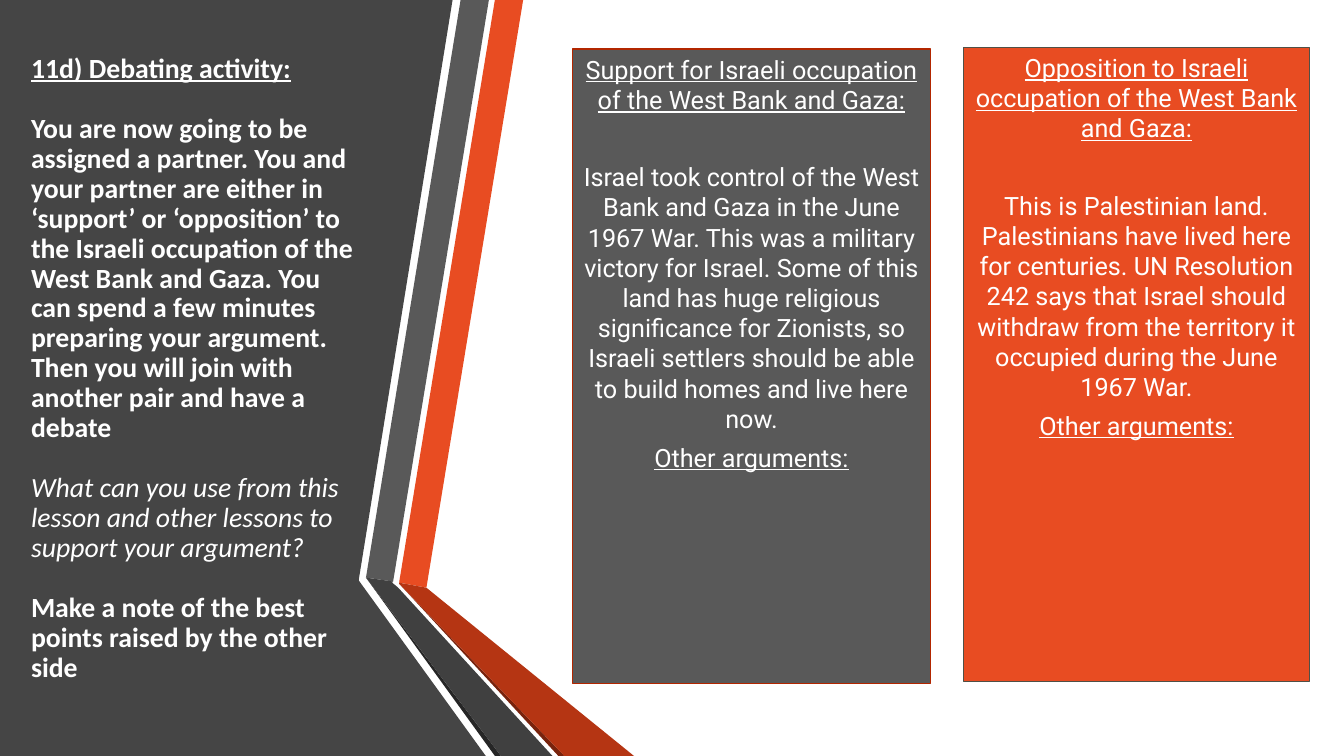
from dataclasses import dataclass

from pptx import Presentation
from pptx.dml.color import RGBColor
from pptx.enum.shapes import MSO_SHAPE
from pptx.enum.text import MSO_ANCHOR, PP_ALIGN
from pptx.util import Pt


@dataclass(frozen=True)
class Theme:
    backdrop: str = "454545"
    orange: str = "E84C22"
    orange_dark: str = "B53513"
    orange_deep: str = "78230D"
    grey: str = "595959"
    grey_dark: str = "404040"
    grey_deep: str = "262626"
    support_border: str = "B22600"
    opposition_border: str = "505046"
    text: str = "FFFFFF"
    task_font: str = "Calibri"
    panel_font: str = "Roboto"
    task_size: float = 19.8
    panel_size: float = 18


THEME = Theme()

RIBBONS = [
    (THEME.backdrop, [(0, 0), (323.3, 0), (256.3, 414), (256.3, 414.7), (347, 540), (0, 540)]),
    (THEME.orange, [(285.1, 416.2), (304.6, 419.8), (373.7, 0), (353.5, 0)]),
    (THEME.grey, [(349.2, 0), (329, 0), (261.4, 412.6), (280.8, 415.4)]),
    (THEME.grey_deep, [(261.4, 412.6), (353.5, 540), (357.8, 540)]),
    (THEME.orange_deep, [(285.1, 416.9), (398.9, 540), (403.2, 540)]),
    (THEME.orange_dark, [(285.1, 416.9), (403.2, 540), (452.9, 540), (304.6, 419.8), (285.1, 416.2)]),
    (THEME.grey_dark, [(394.6, 540), (284.4, 419.8), (280.1, 416.2), (280.8, 415.4),
                       (261.4, 412.6), (357.8, 540)]),
]

TASK = [
    ("11d) Debating activity:", {"bold": True, "underline": True}),
    ("You are now going to be assigned a partner. You and your partner are either in "
     "‘support’ or ‘opposition’ to the Israeli occupation of the West Bank and Gaza. "
     "You can spend a few minutes preparing your argument. Then you will join with "
     "another pair and have a debate", {"bold": True}),
    ("What can you use from this lesson and other lessons to support your argument?",
     {"italic": True}),
    ("Make a note of the best points raised by the other side", {"bold": True}),
]

SUPPORT = (
    "Support for Israeli occupation of the West Bank and Gaza:",
    "Israel took control of the West Bank and Gaza in the June 1967 War. This was a "
    "military victory for Israel. Some of this land has huge religious significance for "
    "Zionists, so Israeli settlers should be able to build homes and live here now.",
)
OPPOSITION = (
    "Opposition to Israeli occupation of the West Bank and Gaza:",
    "This is Palestinian land. Palestinians have lived here for centuries. UN Resolution "
    "242 says that Israel should withdraw from the territory it occupied during the "
    "June 1967 War.",
)


def paint(shape, fill, border=None):
    shape.shadow.inherit = False
    shape.fill.solid()
    shape.fill.fore_color.rgb = RGBColor.from_string(fill)
    if border:
        shape.line.color.rgb = RGBColor.from_string(border)
        shape.line.width = Pt(0.75)
    else:
        shape.line.fill.background()


def add_ribbon(slide, color, points):
    corners = [(Pt(x), Pt(y)) for x, y in points]
    builder = slide.shapes.build_freeform(*corners[0])
    builder.add_line_segments(corners[1:], close=True)
    paint(builder.convert_to_shape(), color)


def write(frame, text, *, font, size, align=PP_ALIGN.LEFT, after=0, spacing=1.0,
          bold=False, italic=False, underline=False):
    paragraph = frame.paragraphs[0]
    if paragraph.runs:
        paragraph = frame.add_paragraph()
    paragraph.alignment = align
    paragraph.space_after = Pt(after)
    paragraph.line_spacing = spacing
    run = paragraph.add_run()
    run.text = text
    run.font.name = font
    run.font.size = Pt(size)
    run.font.bold = bold
    run.font.italic = italic
    run.font.underline = underline
    run.font.color.rgb = RGBColor.from_string(THEME.text)


def add_task(slide):
    frame = slide.shapes.add_textbox(Pt(15.1), Pt(35.3), Pt(252), Pt(484.6)).text_frame
    frame.word_wrap = True
    frame.vertical_anchor = MSO_ANCHOR.TOP
    for text, emphasis in TASK:
        write(frame, text, font=THEME.task_font, size=THEME.task_size,
              after=21.4, spacing=0.9, **emphasis)


def add_panel(slide, left, top, width, fill, border, content):
    shape = slide.shapes.add_shape(MSO_SHAPE.RECTANGLE, Pt(left), Pt(top), Pt(width), Pt(452.9))
    paint(shape, fill, border)
    frame = shape.text_frame
    frame.word_wrap = True
    frame.vertical_anchor = MSO_ANCHOR.TOP
    heading, argument = content
    style = {"font": THEME.panel_font, "size": THEME.panel_size, "align": PP_ALIGN.CENTER}
    write(frame, heading, after=33.5, underline=True, **style)
    write(frame, argument, after=6, **style)
    write(frame, "Other arguments:", after=6, underline=True, **style)


def main():
    presentation = Presentation()
    presentation.slide_width = Pt(960)
    presentation.slide_height = Pt(540)
    slide = presentation.slides.add_slide(presentation.slide_layouts[6])
    for color, points in RIBBONS:
        add_ribbon(slide, color, points)
    add_panel(slide, 409, 35, 255.6, THEME.grey, THEME.support_border, SUPPORT)
    add_panel(slide, 688.3, 33.8, 247, THEME.orange, THEME.opposition_border, OPPOSITION)
    add_task(slide)
    presentation.save("out.pptx")


if __name__ == "__main__":
    main()
